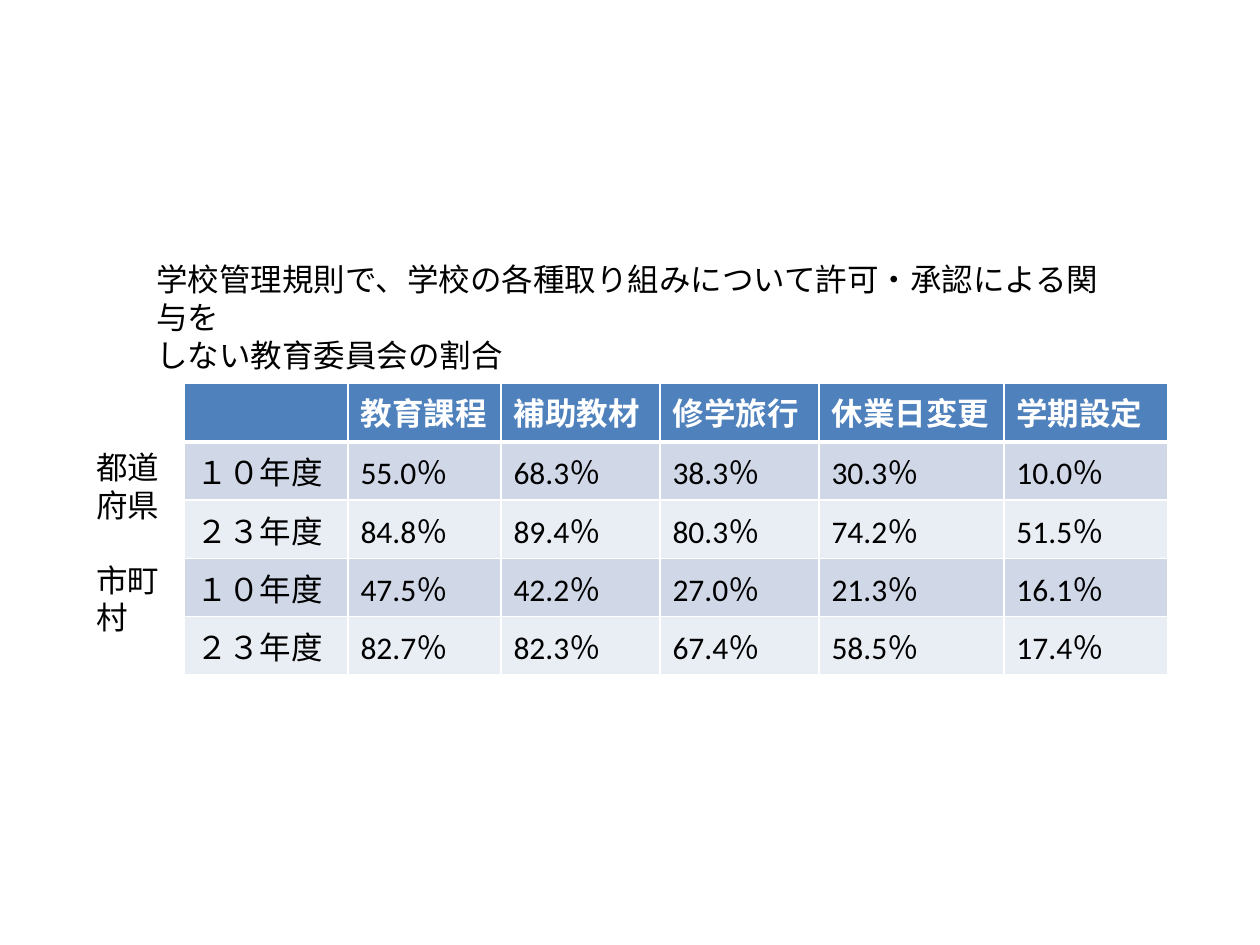
from lxml import etree
from pptx import Presentation
from pptx import util as u
from pptx.dml.color import RGBColor
from pptx.enum import text
from pptx.oxml.ns import qn

PX = u.Inches(1) // 126
COLORS = {
    "header": "4F81BD",
    "odd": "D0D8E8",
    "even": "E9EDF4",
    "white": "FFFFFF",
    "black": "000000",
}
COLUMN_WIDTHS = [164, 153, 159, 159, 185, 164]
ROW_HEIGHTS = [59, 43, 43, 43, 43]
RATES = [
    ["", "教育課程", "補助教材", "修学旅行", "休業日変更", "学期設定"],
    ["１０年度", "55.0％", "68.3％", "38.3％", "30.3％", "10.0％"],
    ["２３年度", "84.8％", "89.4％", "80.3％", "74.2％", "51.5％"],
    ["１０年度", "47.5％", "42.2％", "27.0％", "21.3％", "16.1％"],
    ["２３年度", "82.7％", "82.3％", "67.4％", "58.5％", "17.4％"],
]


def px(*lengths):
    return [length * PX for length in lengths]


def color(name):
    return RGBColor.from_string(COLORS[name])


def style_paragraph(paragraph, color_name, bold=False):
    paragraph.font.name = "Calibri"
    paragraph.font.size = u.Pt(18)
    paragraph.font.bold = bold
    paragraph.font.color.rgb = color(color_name)


def add_text(slide, box, lines, gap=0):
    frame = slide.shapes.add_textbox(*px(*box)).text_frame
    frame.word_wrap = True
    frame.auto_size = text.MSO_AUTO_SIZE.SHAPE_TO_FIT_TEXT
    frame.text = "\n".join(lines)
    for paragraph in frame.paragraphs:
        style_paragraph(paragraph, "black")
    frame.paragraphs[-1].space_before = u.Pt(gap)


def set_borders(cell, top, bottom):
    properties = cell._tc.get_or_add_tcPr()
    widths = {"a:lnL": 1, "a:lnR": 1, "a:lnT": top, "a:lnB": bottom}
    for position, (tag, width) in enumerate(widths.items()):
        line = etree.Element(qn(tag), w=str(u.Pt(width)))
        fill = etree.SubElement(line, qn("a:solidFill"))
        etree.SubElement(fill, qn("a:srgbClr"), val=COLORS["white"])
        properties.insert(position, line)


def style_cell(cell, row):
    header = row == 0
    cell.fill.solid()
    cell.fill.fore_color.rgb = color(
        "header" if header else "odd" if row % 2 else "even"
    )
    style_paragraph(
        cell.text_frame.paragraphs[0], "white" if header else "black", header
    )
    set_borders(cell, 3 if row == 1 else 1, 3 if header else 1)


def add_rate_table(slide, box):
    frame = slide.shapes.add_table(len(RATES), len(RATES[0]), *px(*box))
    table = frame.table
    for column, width in zip(table.columns, px(*COLUMN_WIDTHS)):
        column.width = width
    for row, height in zip(table.rows, px(*ROW_HEIGHTS)):
        row.height = height
    frame.height = box[3] * PX
    for row, values in enumerate(RATES):
        for column, value in enumerate(values):
            cell = table.cell(row, column)
            cell.text = value
            style_cell(cell, row)


def main():
    presentation = Presentation()
    presentation.slide_width, presentation.slide_height = px(1260, 945)
    slide = presentation.slides.add_slide(presentation.slide_layouts[6])
    add_rate_table(slide, (184, 383, 984, 261))
    add_text(
        slide,
        (144, 254, 981, 89),
        [
            "学校管理規則で、学校の各種取り組みについて許可・承認による関与を",
            "しない教育委員会の割合",
        ],
    )
    add_text(slide, (84, 442, 89, 204), ["都道府県", "市町村"], gap=21)
    presentation.save("out.pptx")


if __name__ == "__main__":
    main()
